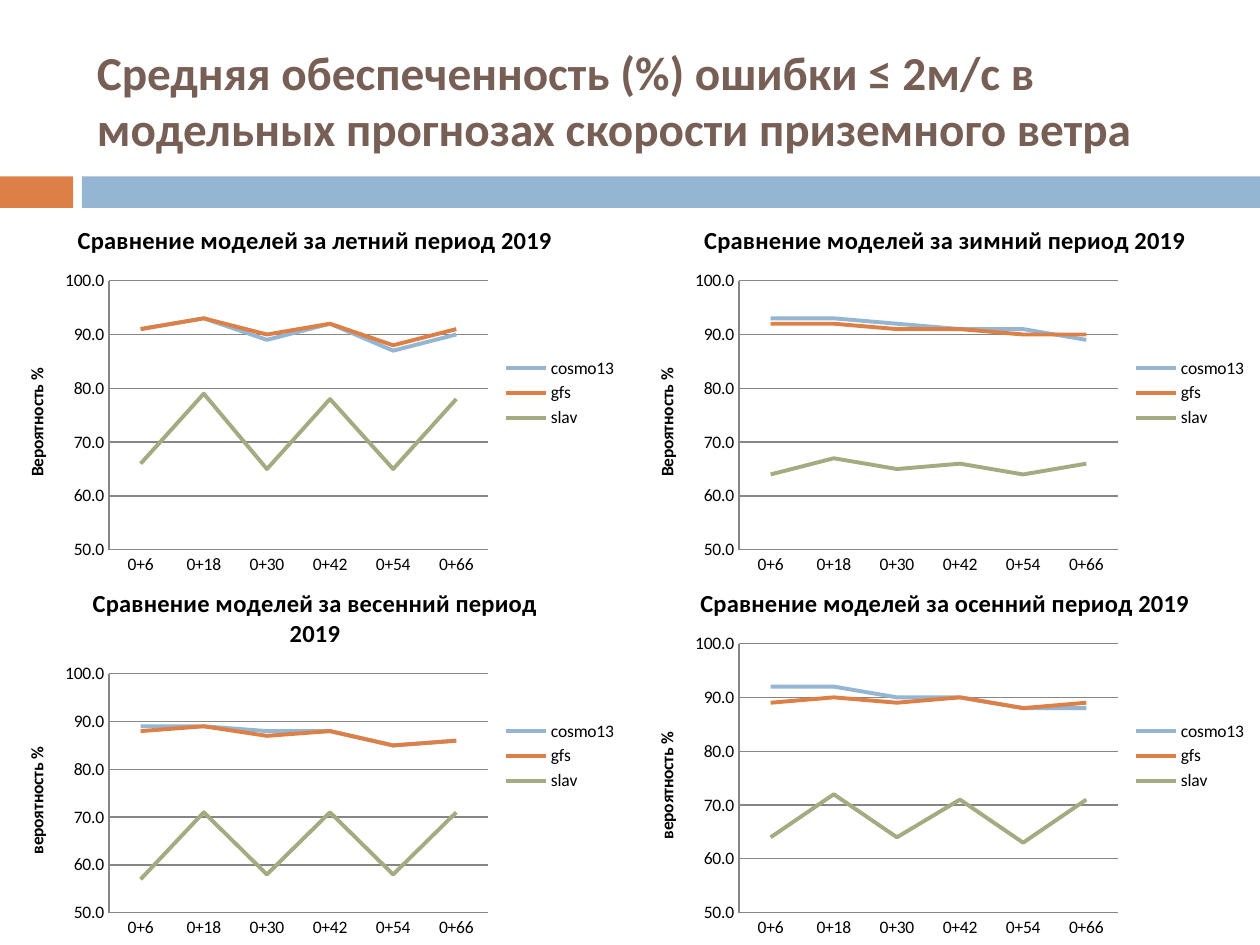
from pptx import Presentation
from pptx.chart.data import CategoryChartData
from pptx.dml.color import RGBColor
from pptx.enum.chart import XL_CHART_TYPE as ChartType, XL_LEGEND_POSITION as LegendPosition, XL_TICK_MARK as TickMark
from pptx.enum.shapes import MSO_SHAPE as ShapeType
from pptx.enum.text import MSO_ANCHOR as Anchor
from pptx.util import Inches, Pt

WIDTH, HEIGHT = 10, 7.5
FONT = "Calibri"
COLORS = {
    "title": "775F55",
    "text": "000000",
    "axis": "868686",
    "accent": "DD8047",
    "band": "94B6D2",
    "cosmo13": "94B6D2",
    "gfs": "DD8047",
    "slav": "A5AB81",
}
TITLE = "Средняя обеспеченность (%) ошибки ≤ 2м/с в модельных прогнозах скорости приземного ветра"
LEAD_TIMES = ["0+6", "0+18", "0+30", "0+42", "0+54", "0+66"]
ROW_TOPS = [1.62, 4.5]
CHART_WIDTH, CHART_HEIGHT = WIDTH / 2, 3
SEASONS = [
    ("летний", "Вероятность %", {
        "cosmo13": [91, 93, 89, 92, 87, 90],
        "gfs": [91, 93, 90, 92, 88, 91],
        "slav": [66, 79, 65, 78, 65, 78],
    }),
    ("зимний", "Вероятность %", {
        "cosmo13": [93, 93, 92, 91, 91, 89],
        "gfs": [92, 92, 91, 91, 90, 90],
        "slav": [64, 67, 65, 66, 64, 66],
    }),
    ("весенний", "вероятность %", {
        "cosmo13": [89, 89, 88, 88, 85, 86],
        "gfs": [88, 89, 87, 88, 85, 86],
        "slav": [57, 71, 58, 71, 58, 71],
    }),
    ("осенний", "вероятность %", {
        "cosmo13": [92, 92, 90, 90, 88, 88],
        "gfs": [89, 90, 89, 90, 88, 89],
        "slav": [64, 72, 64, 71, 63, 71],
    }),
]


def color(name):
    return RGBColor.from_string(COLORS[name])


def set_font(font, size, bold=False, color_name="text"):
    font.name = FONT
    font.size = Pt(size)
    font.bold = bold
    font.color.rgb = color(color_name)


def set_line(line, color_name, width):
    line.color.rgb = color(color_name)
    line.width = Pt(width)


def add_bar(slide, left, width, color_name):
    bar = slide.shapes.add_shape(
        ShapeType.RECTANGLE, Inches(left), Inches(1.4), Inches(width), Inches(0.25))
    bar.shadow.inherit = False
    bar.fill.solid()
    bar.fill.fore_color.rgb = color(color_name)
    bar.line.fill.background()


def add_title(slide):
    box = slide.shapes.add_textbox(Inches(0.67), Inches(0.25), Inches(8.92), Inches(1.08))
    frame = box.text_frame
    frame.word_wrap = True
    frame.vertical_anchor = Anchor.MIDDLE
    paragraph = frame.paragraphs[0]
    paragraph.text = TITLE
    set_font(paragraph.font, 27, True, "title")


def label(titled, text, size):
    frame = titled.text_frame
    frame.text = text
    set_font(frame.paragraphs[0].font, size, True)


def style_axes(chart, axis_title):
    category_axis, value_axis = chart.category_axis, chart.value_axis
    for axis in (category_axis, value_axis):
        axis.major_tick_mark = TickMark.NONE
        axis.minor_tick_mark = TickMark.NONE
        set_line(axis.format.line, "axis", 0.75)
    value_axis.minimum_scale = 50
    value_axis.maximum_scale = 100
    value_axis.major_unit = 10
    value_axis.has_major_gridlines = True
    set_line(value_axis.major_gridlines.format.line, "axis", 0.75)
    value_axis.tick_labels.number_format = "0.0"
    value_axis.tick_labels.number_format_is_linked = False
    label(value_axis.axis_title, axis_title, 10)


def add_season_chart(slide, column, row, season, axis_title, models):
    data = CategoryChartData(number_format="0.0")
    data.categories = LEAD_TIMES
    for name, values in models.items():
        data.add_series(name, values)
    chart = slide.shapes.add_chart(
        ChartType.LINE, Inches(column * CHART_WIDTH), Inches(ROW_TOPS[row]),
        Inches(CHART_WIDTH), Inches(CHART_HEIGHT), data).chart
    set_font(chart.font, 10)
    label(chart.chart_title, f"Сравнение моделей за {season} период 2019", 14)
    chart.chart_title.include_in_layout = False
    chart.has_legend = True
    chart.legend.position = LegendPosition.RIGHT
    chart.legend.include_in_layout = False
    chart.plots[0].vary_by_categories = False
    style_axes(chart, axis_title)
    for series in chart.plots[0].series:
        series.smooth = False
        set_line(series.format.line, series.name, 2.25)


def main():
    presentation = Presentation()
    presentation.slide_width = Inches(WIDTH)
    presentation.slide_height = Inches(HEIGHT)
    slide = presentation.slides.add_slide(presentation.slide_layouts[6])
    add_bar(slide, 0, 0.58, "accent")
    add_bar(slide, 0.65, WIDTH - 0.65, "band")
    add_title(slide)
    for index, (season, axis_title, models) in enumerate(SEASONS):
        row, column = divmod(index, 2)
        add_season_chart(slide, column, row, season, axis_title, models)
    presentation.save("out.pptx")


if __name__ == "__main__":
    main()
